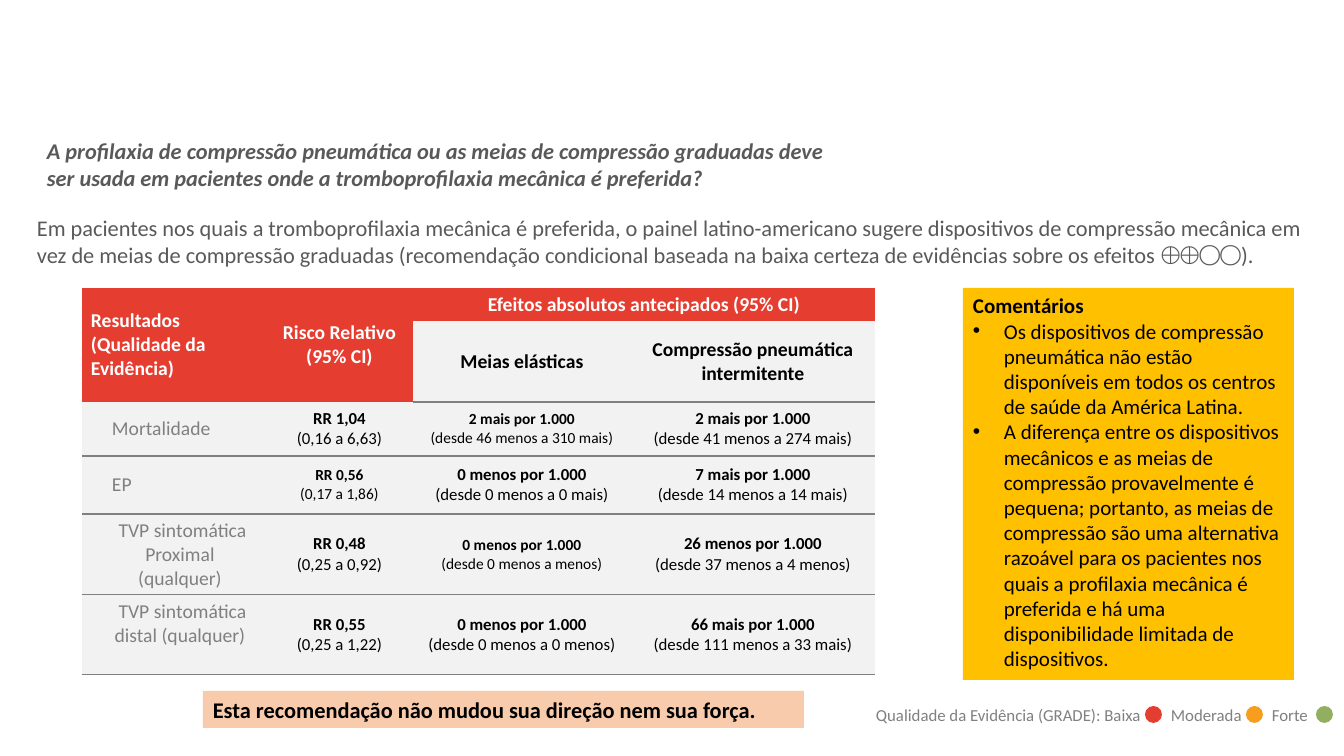
import pptx
import pptx.util
import pptx.dml.color
import pptx.enum.shapes
import pptx.enum.text
import pptx.oxml
import pptx.oxml.ns
import lxml.etree

THEME = {
    "font": "Calibri", "symbols": "Cambria",
    "text": "595959", "muted": "808080", "black": "000000", "white": "FFFFFF",
    "header": "E53E31", "cell": "F2F2F2", "comments": "FFC000", "note": "F8CBAD",
    "low": "E43E32", "moderate": "F99D1C", "strong": "91AF5F",
    "lead": 16, "comment": 15, "label": 14, "value": 12, "small": 11,
}
EMU_PER_PX = 914400 / 100.8
NO_STYLE = "{2D5ABB26-0587-4C30-8999-92F81FD0307C}"
qn = pptx.oxml.ns.qn
rgb = pptx.dml.color.RGBColor.from_string
SHAPE = pptx.enum.shapes.MSO_SHAPE
ALIGN = pptx.enum.text.PP_ALIGN
ANCHOR = pptx.enum.text.MSO_ANCHOR


def px(n):
    return pptx.util.Emu(round(n * EMU_PER_PX))


def write(tf, lines, size, color, bold=(False,), align=ALIGN.LEFT, indents=(0,)):
    """Fill a frame, one paragraph per line; the last bold and indent repeat."""
    tf.word_wrap = True
    for i, line in enumerate(lines):
        p = tf.paragraphs[0] if i == 0 else tf.add_paragraph()
        p.text = line
        p.alignment = align
        p._p.get_or_add_pPr().set("marL", str(px(indents[min(i, len(indents) - 1)])))
        r = p.runs[0]
        r.font.name = THEME["font"]
        r.font.size = pptx.util.Pt(THEME[size])
        r.font.bold = bold[min(i, len(bold) - 1)]
        r.font.color.rgb = rgb(THEME[color])


prs = pptx.Presentation()
prs.slide_width, prs.slide_height = px(1344), px(756)
s = prs.slides.add_slide(prs.slide_layouts[6])

# Question and recommendation
question = s.shapes.add_textbox(px(37), px(132), px(816), px(71))
write(question.text_frame, [
    "A profilaxia de compressão pneumática ou as meias de compressão graduadas "
    "deve ser usada em pacientes onde a tromboprofilaxia mecânica é preferida?"],
    "lead", "text", bold=(True,))
question.text_frame.paragraphs[0].runs[0].font.italic = True

recommendation = s.shapes.add_textbox(px(37), px(214), px(1270), px(63))
tf = recommendation.text_frame
tf.margin_left = tf.margin_right = tf.margin_top = tf.margin_bottom = 0
write(tf, [
    "Em pacientes nos quais a tromboprofilaxia mecânica é preferida, o painel "
    "latino-americano sugere dispositivos de compressão mecânica em vez de meias "
    "de compressão graduadas (recomendação condicional baseada na baixa certeza "
    "de evidências sobre os efeitos "], "lead", "text")
for text, font in (("⨁⨁◯◯", "symbols"), (").", "font")):
    r = tf.paragraphs[0].add_run()
    r.text = text
    r.font.name = THEME[font]
    r.font.size = pptx.util.Pt(THEME["lead"])
    r.font.color.rgb = rgb(THEME["text"])

# Comments and closing note
panels = (
    ((963, 288, 331, 392), "comments", "comment", (True, False), (0, 31), ANCHOR.TOP, [
        "Comentários",
        "Os dispositivos de compressão pneumática não estão disponíveis em todos os "
        "centros de saúde da América Latina.",
        "A diferença entre os dispositivos mecânicos e as meias de compressão "
        "provavelmente é pequena; portanto, as meias de compressão são uma alternativa "
        "razoável para os pacientes nos quais a profilaxia mecânica é preferida e há "
        "uma disponibilidade limitada de dispositivos."]),
    ((203, 691, 601, 37), "note", "lead", (True,), (0,), ANCHOR.MIDDLE, [
        "Esta recomendação não mudou sua direção nem sua força."]),
)
for box, fill, size, bold, indents, anchor, lines in panels:
    sp = s.shapes.add_shape(SHAPE.RECTANGLE, *map(px, box))
    sp.shadow.inherit = False
    sp.fill.solid()
    sp.fill.fore_color.rgb = rgb(THEME[fill])
    sp.line.fill.background()
    sp.text_frame.vertical_anchor = anchor
    write(sp.text_frame, lines, size, "black", bold, indents=indents)
    for p in sp.text_frame.paragraphs[1:]:
        pPr = p._p.get_or_add_pPr()
        pPr.set("indent", str(-px(31)))
        lxml.etree.SubElement(pPr, qn("a:buFont")).set("typeface", "Arial")
        lxml.etree.SubElement(pPr, qn("a:buChar")).set("char", "•")

# Results table
col_widths = (184, 147, 218, 244)
row_heights = (33, 80, 54, 58, 78, 80)
frame = s.shapes.add_table(6, 4, px(82), px(288), px(sum(col_widths)), px(sum(row_heights)))
table = frame.table
table.first_row = table.horz_banding = False
table._tbl.tblPr.find(qn("a:tableStyleId")).text = NO_STYLE
for column, width in zip(table.columns, col_widths):
    column.width = px(width)
for row, height in zip(table.rows, row_heights):
    row.height = px(height)
for first, last in (((0, 0), (1, 0)), ((0, 1), (1, 1)), ((0, 2), (0, 3))):
    table.cell(*first).merge(table.cell(*last))

headers = (
    (0, 0, ["Resultados", "(Qualidade da Evidência)"], "white", ALIGN.LEFT),
    (0, 1, ["Risco Relativo", "(95% CI)"], "white", ALIGN.CENTER),
    (0, 2, ["Efeitos absolutos antecipados (95% CI)"], "white", ALIGN.CENTER),
    (1, 2, ["Meias elásticas"], "black", ALIGN.CENTER),
    (1, 3, ["Compressão pneumática intermitente"], "black", ALIGN.CENTER),
)
for row, col, lines, color, align in headers:
    write(table.cell(row, col).text_frame, lines, "label", color, (True,), align)

results = (
    (["Mortalidade"],
     ("RR 1,04", "(0,16 a 6,63)", "value"),
     ("2 mais por 1.000", "(desde 46 menos a 310 mais)", "small"),
     ("2 mais por 1.000", "(desde 41 menos a 274 mais)", "value")),
    (["EP"],
     ("RR 0,56", "(0,17 a 1,86)", "small"),
     ("0 menos por 1.000", "(desde 0 menos a 0 mais)", "value"),
     ("7 mais por 1.000", "(desde 14 menos a 14 mais)", "value")),
    (["TVP sintomática", "Proximal (qualquer)"],
     ("RR 0,48", "(0,25 a 0,92)", "value"),
     ("0 menos por 1.000", "(desde 0 menos a menos)", "small"),
     ("26 menos por 1.000", "(desde 37 menos a 4 menos)", "value")),
    (["TVP sintomática", "distal (qualquer)"],
     ("RR 0,55", "(0,25 a 1,22)", "value"),
     ("0 menos por 1.000", "(desde 0 menos a 0 menos)", "value"),
     ("66 mais por 1.000", "(desde 111 menos a 33 mais)", "value")),
)
for row, (outcome, *effects) in enumerate(results, start=2):
    centred = len(outcome) > 1
    write(table.cell(row, 0).text_frame, outcome, "label", "muted",
          align=ALIGN.CENTER if centred else ALIGN.LEFT,
          indents=(17, 12) if centred else (21,))
    for col, (effect, interval, size) in enumerate(effects, start=1):
        write(table.cell(row, col).text_frame, [effect, interval], size, "black",
              (True, False), ALIGN.CENTER)

for row in range(6):
    for col in range(4):
        cell = table.cell(row, col)
        in_header = row == 0 or (row == 1 and col < 2)
        cell.vertical_anchor = ANCHOR.MIDDLE
        cell.margin_left = cell.margin_right = px(9)
        cell.margin_top = cell.margin_bottom = px(5)
        cell.fill.solid()
        cell.fill.fore_color.rgb = rgb(THEME["header" if in_header else "cell"])
        if not in_header:
            cell._tc.get_or_add_tcPr().insert(0, pptx.oxml.parse_xml(
                f'<a:lnB {pptx.oxml.ns.nsdecls("a")} w="12700"><a:solidFill>'
                f'<a:srgbClr val="{THEME["muted"]}"/></a:solidFill></a:lnB>'))
table.cell(5, 0).vertical_anchor = ANCHOR.TOP

# Evidence quality legend
legend = s.shapes.add_textbox(px(866), px(700), px(457), px(30))
write(legend.text_frame, ["Qualidade da Evidência (GRADE): Baixa\tModerada\tForte"],
      "value", "muted")
tabs = lxml.etree.SubElement(legend.text_frame.paragraphs[0]._p.get_or_add_pPr(), qn("a:tabLst"))
for stop in (295, 396):
    tab = lxml.etree.SubElement(tabs, qn("a:tab"))
    tab.set("pos", str(px(stop)))
    tab.set("algn", "l")
for left, level in ((1145, "low"), (1246, "moderate"), (1316, "strong")):
    sp = s.shapes.add_shape(SHAPE.OVAL, px(left), px(706), px(17), px(17))
    sp.shadow.inherit = False
    sp.fill.solid()
    sp.fill.fore_color.rgb = rgb(THEME[level])
    sp.line.fill.background()

prs.save("out.pptx")
